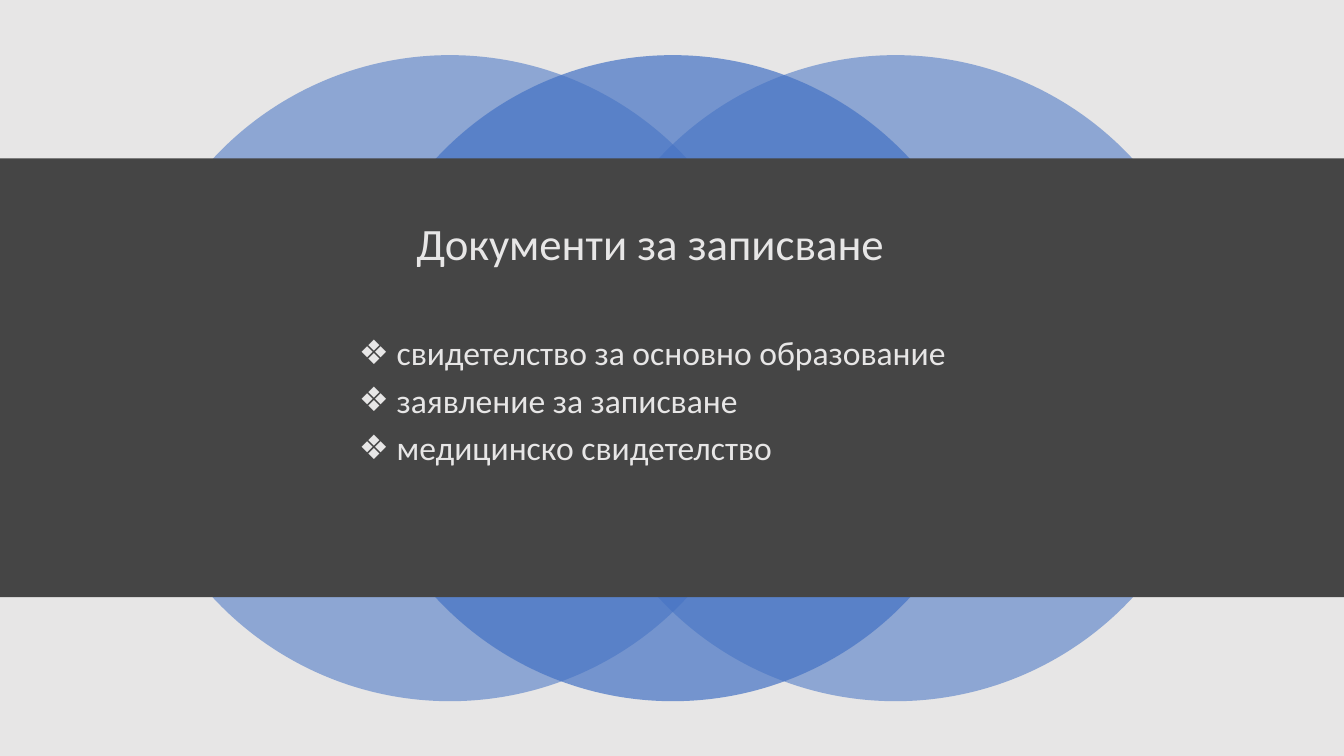
from lxml import etree
from pptx import Presentation
from pptx.dml.color import RGBColor
from pptx.enum.shapes import MSO_SHAPE
from pptx.enum.text import MSO_ANCHOR, MSO_AUTO_SIZE, PP_ALIGN
from pptx.oxml.ns import qn
from pptx.util import Cm, Pt

RECTANGLE, OVAL = MSO_SHAPE.RECTANGLE, MSO_SHAPE.OVAL
TOP, MIDDLE = MSO_ANCHOR.TOP, MSO_ANCHOR.MIDDLE
LEFT, CENTER = PP_ALIGN.LEFT, PP_ALIGN.CENTER
NO_AUTOFIT = MSO_AUTO_SIZE.NONE

DARK = RGBColor(0x45, 0x45, 0x45)
LIGHT = RGBColor(0xE7, 0xE6, 0xE6)
BLUE = RGBColor(0x44, 0x72, 0xC4)

FONT = "Calibri"
SLIDE_WIDTH, SLIDE_HEIGHT = Cm(33.87), Cm(19.05)
TITLE = "Документи за записване"
DOCUMENTS = [
    "свидетелство за основно образование",
    "заявление за записване",
    "медицинско свидетелство",
]


def add_filled_shape(shapes, kind, box, color, opacity=100):
    shape = shapes.add_shape(kind, *box)
    shape.shadow.inherit = False
    shape.fill.solid()
    shape.fill.fore_color.rgb = color
    shape.line.fill.background()
    if opacity < 100:
        color_element = shape.element.spPr.find(qn("a:solidFill"))[0]
        alpha = etree.SubElement(color_element, qn("a:alpha"))
        alpha.set("val", str(opacity * 1000))


def add_circles(slide, box):
    left, top, width, diameter = box
    step = (width - diameter) // 2
    group = slide.shapes.add_group_shape()
    for position, opacity in ((0, 55), (2, 55), (1, 70)):
        circle_box = (left + position * step, top, diameter, diameter)
        add_filled_shape(group.shapes, OVAL, circle_box, BLUE, opacity)


def place_text(placeholder, box, lines, size, alignment, anchor):
    placeholder.left, placeholder.top, placeholder.width, placeholder.height = box
    placeholder.element.getparent().append(placeholder.element)
    text_frame = placeholder.text_frame
    text_frame.text = "\n".join(lines)
    text_frame.word_wrap = True
    text_frame.auto_size = NO_AUTOFIT
    text_frame.vertical_anchor = anchor
    for paragraph in text_frame.paragraphs:
        paragraph.alignment = alignment
        paragraph.line_spacing = 0.9
        paragraph.space_before = Pt(0)
        paragraph.font.name = FONT
        paragraph.font.size = Pt(size)
        paragraph.font.color.rgb = LIGHT
    return text_frame.paragraphs


def add_title(slide, box):
    place_text(slide.shapes.title, box, [TITLE], 32, CENTER, MIDDLE)


def add_document_list(slide, box):
    indent = Cm(0.95)
    for paragraph in place_text(slide.placeholders[1], box, DOCUMENTS, 24, LEFT, TOP):
        paragraph.space_after = Pt(8)
        properties = paragraph._p.get_or_add_pPr()
        properties.set("marL", str(indent))
        properties.set("indent", str(-indent))
        bullet = etree.Element(qn("a:buChar"), char="❖")
        properties.find(qn("a:defRPr")).addprevious(bullet)


def build_documents_slide(presentation):
    slide = presentation.slides.add_slide(presentation.slide_layouts[1])
    slide.background.fill.solid()
    slide.background.fill.fore_color.rgb = DARK
    add_filled_shape(slide.shapes, RECTANGLE, (0, 0, SLIDE_WIDTH, SLIDE_HEIGHT), LIGHT)
    add_circles(slide, (Cm(3.2), Cm(1.39), Cm(27.51), Cm(16.28)))
    add_filled_shape(slide.shapes, RECTANGLE, (0, Cm(3.99), SLIDE_WIDTH, Cm(11.06)), DARK)
    add_title(slide, (Cm(2.33), Cm(4.9), Cm(28.12), Cm(2.59)))
    add_document_list(slide, (Cm(8.79), Cm(8.36), Cm(18.44), Cm(5.87)))


def main():
    presentation = Presentation()
    presentation.slide_width = SLIDE_WIDTH
    presentation.slide_height = SLIDE_HEIGHT
    build_documents_slide(presentation)
    presentation.save("out.pptx")


if __name__ == "__main__":
    main()
